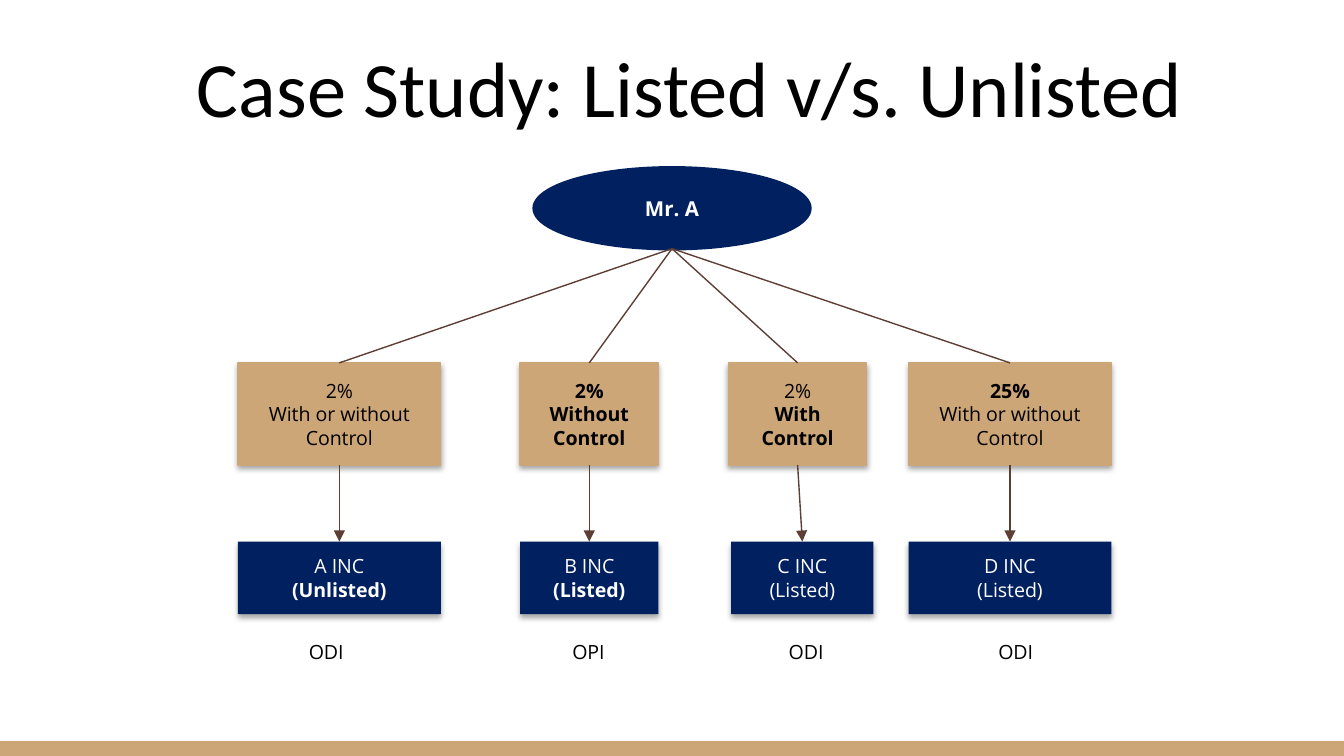
from dataclasses import dataclass

from lxml import etree
from pptx import Presentation
from pptx.dml.color import RGBColor
from pptx.enum.shapes import MSO_CONNECTOR, MSO_SHAPE
from pptx.enum.text import MSO_ANCHOR, MSO_AUTO_SIZE, PP_ALIGN
from pptx.oxml.ns import qn
from pptx.util import Inches, Pt

RECTANGLE = MSO_SHAPE.RECTANGLE
ELLIPSE = MSO_SHAPE.OVAL
STRAIGHT = MSO_CONNECTOR.STRAIGHT
CENTER = PP_ALIGN.CENTER
LEFT = PP_ALIGN.LEFT
MIDDLE = MSO_ANCHOR.MIDDLE
BOTTOM = MSO_ANCHOR.BOTTOM
NO_AUTOFIT = MSO_AUTO_SIZE.NONE
GROW = MSO_AUTO_SIZE.SHAPE_TO_FIT_TEXT

SLIDE_WIDTH = 10
SLIDE_HEIGHT = SLIDE_WIDTH * 9 / 16
TITLE_ONLY = 5
TOP_SITE, BOTTOM_SITE = 0, 2


@dataclass(frozen=True)
class Theme:
    navy: RGBColor = RGBColor(0x00, 0x20, 0x60)
    tan: RGBColor = RGBColor(0xCC, 0xA6, 0x77)
    brown: RGBColor = RGBColor(0x5C, 0x3E, 0x35)
    white: RGBColor = RGBColor(0xFF, 0xFF, 0xFF)
    black: RGBColor = RGBColor(0x00, 0x00, 0x00)
    title_font: str = "Calibri"
    body_font: str = "Open Sans"
    title_size: float = 42
    owner_size: float = 11
    body_size: float = 10.5
    thin: float = 0.75


THEME = Theme()

# Rows of the chart: top and height
OWNER_ROW = (1.25, 0.6)
STAKE_ROW = (2.7, 0.76)
COMPANY_ROW = (4.03, 0.54)
OUTCOME_ROW = (4.71, 0.28)
OUTCOME_WIDTH = 0.6


@dataclass(frozen=True)
class Holding:
    """One column; each text line is paired with whether it is bold."""
    stake_span: tuple
    stake: list
    company_span: tuple
    company: list
    outcome_left: float
    outcome: str


WIDE_LEFT, WIDE_RIGHT, NARROW = (1.77, 1.51), (6.76, 1.51), (3.87, 1.03)
HOLDINGS = [
    Holding(WIDE_LEFT, [("2%", False), ("With or without Control", False)],
            WIDE_LEFT, [("A INC", False), ("(Unlisted)", True)], 2.2, "ODI"),
    Holding(NARROW, [("2%", True), ("Without Control", True)],
            NARROW, [("B INC", False), ("(Listed)", True)], 4.16, "OPI"),
    Holding((5.42, 1.03), [("2%", False), ("With Control", True)],
            (5.44, 1.06), [("C INC", False), ("(Listed)", False)], 5.77, "ODI"),
    Holding(WIDE_RIGHT, [("25%", True), ("With or without Control", False)],
            WIDE_RIGHT, [("D INC", False), ("(Listed)", False)], 7.33, "ODI"),
]


def place(span, row):
    """Turn a column span and a row into left, top, width, height."""
    return [Inches(value) for value in (span[0], row[0], span[1], row[1])]


def write_lines(frame, lines, color, size, font=THEME.body_font, align=CENTER):
    frame.word_wrap = True
    frame.text = "\n".join(text for text, _ in lines)
    for paragraph, (_, bold) in zip(frame.paragraphs, lines):
        paragraph.alignment = align
        for run in paragraph.runs:
            run.font.name = font
            run.font.size = Pt(size)
            run.font.bold = bold
            run.font.color.rgb = color


def add_soft_shadow(shape):
    effects = shape._element.spPr.find(qn("a:effectLst"))
    shadow = etree.SubElement(
        effects, qn("a:outerShdw"), blurRad=str(Pt(3.1)), dist=str(Pt(1.8)),
        dir="5400000", algn="t", rotWithShape="0")
    color = etree.SubElement(shadow, qn("a:srgbClr"), val=str(THEME.black))
    etree.SubElement(color, qn("a:alpha"), val="35000")


def add_block(slide, kind, span, row, fill, line_width=None):
    block = slide.shapes.add_shape(kind, *place(span, row))
    block.shadow.inherit = False
    block.fill.solid()
    block.fill.fore_color.rgb = fill
    if line_width:
        block.line.color.rgb = fill
        block.line.width = Pt(line_width)
    else:
        block.line.fill.background()
    block.text_frame.vertical_anchor = MIDDLE
    return block


def add_link(slide, end_shape, start_shape=None, start_point=(0, 0), arrow=False):
    """Join a shape's bottom, or a free point, to the top of end_shape."""
    x, y = (Inches(value) for value in start_point)
    link = slide.shapes.add_connector(STRAIGHT, x, y, x, y)
    if start_shape is not None:
        link.begin_connect(start_shape, BOTTOM_SITE)
    link.end_connect(end_shape, TOP_SITE)
    link.line.color.rgb = THEME.brown
    link.line.width = Pt(THEME.thin)
    properties = link._element.spPr
    if arrow:
        etree.SubElement(properties.find(qn("a:ln")), qn("a:tailEnd"), type="triangle")
    etree.SubElement(properties, qn("a:effectLst"))


def add_outcome(slide, left, text):
    outcome = slide.shapes.add_textbox(*place((left, OUTCOME_WIDTH), OUTCOME_ROW))
    outcome.line.color.rgb = THEME.white
    outcome.line.width = Pt(THEME.thin)
    write_lines(outcome.text_frame, [(text, False)], THEME.black,
                THEME.body_size, align=LEFT)
    outcome.text_frame.auto_size = GROW


def add_title(slide, text):
    title = slide.shapes.title
    title.left, title.top, title.width, title.height = place((0.47, 9.32), (0.18, 0.91))
    frame = title.text_frame
    write_lines(frame, [(text, False)], THEME.black, THEME.title_size, THEME.title_font)
    frame.auto_size = NO_AUTOFIT
    frame.vertical_anchor = BOTTOM
    frame.margin_left = frame.margin_right = Inches(0.1)
    frame.margin_top = frame.margin_bottom = Inches(0.1)


def add_footer_bar(slide):
    height = 0.11
    add_block(slide, RECTANGLE, (0, SLIDE_WIDTH), (SLIDE_HEIGHT - height, height),
              THEME.tan)


def add_owner(slide, text):
    width = 2.05
    span = ((SLIDE_WIDTH - width) / 2, width)
    owner = add_block(slide, ELLIPSE, span, OWNER_ROW, THEME.navy, line_width=2)
    write_lines(owner.text_frame, [(text, True)], THEME.white, THEME.owner_size)


def add_holding(slide, holding):
    stake = add_block(slide, RECTANGLE, holding.stake_span, STAKE_ROW,
                      THEME.tan, THEME.thin)
    company = add_block(slide, RECTANGLE, holding.company_span, COMPANY_ROW, THEME.navy)
    for block, lines, color in ((stake, holding.stake, THEME.black),
                                (company, holding.company, THEME.white)):
        add_soft_shadow(block)
        write_lines(block.text_frame, lines, color, THEME.body_size)
    add_link(slide, stake, start_point=(SLIDE_WIDTH / 2, sum(OWNER_ROW)))
    add_link(slide, company, start_shape=stake, arrow=True)
    add_outcome(slide, holding.outcome_left, holding.outcome)


def main():
    deck = Presentation()
    deck.slide_width, deck.slide_height = Inches(SLIDE_WIDTH), Inches(SLIDE_HEIGHT)
    slide = deck.slides.add_slide(deck.slide_layouts[TITLE_ONLY])
    add_footer_bar(slide)
    add_title(slide, "Case Study: Listed v/s. Unlisted")
    add_owner(slide, "Mr. A")
    for holding in HOLDINGS:
        add_holding(slide, holding)
    deck.save("out.pptx")


if __name__ == "__main__":
    main()
